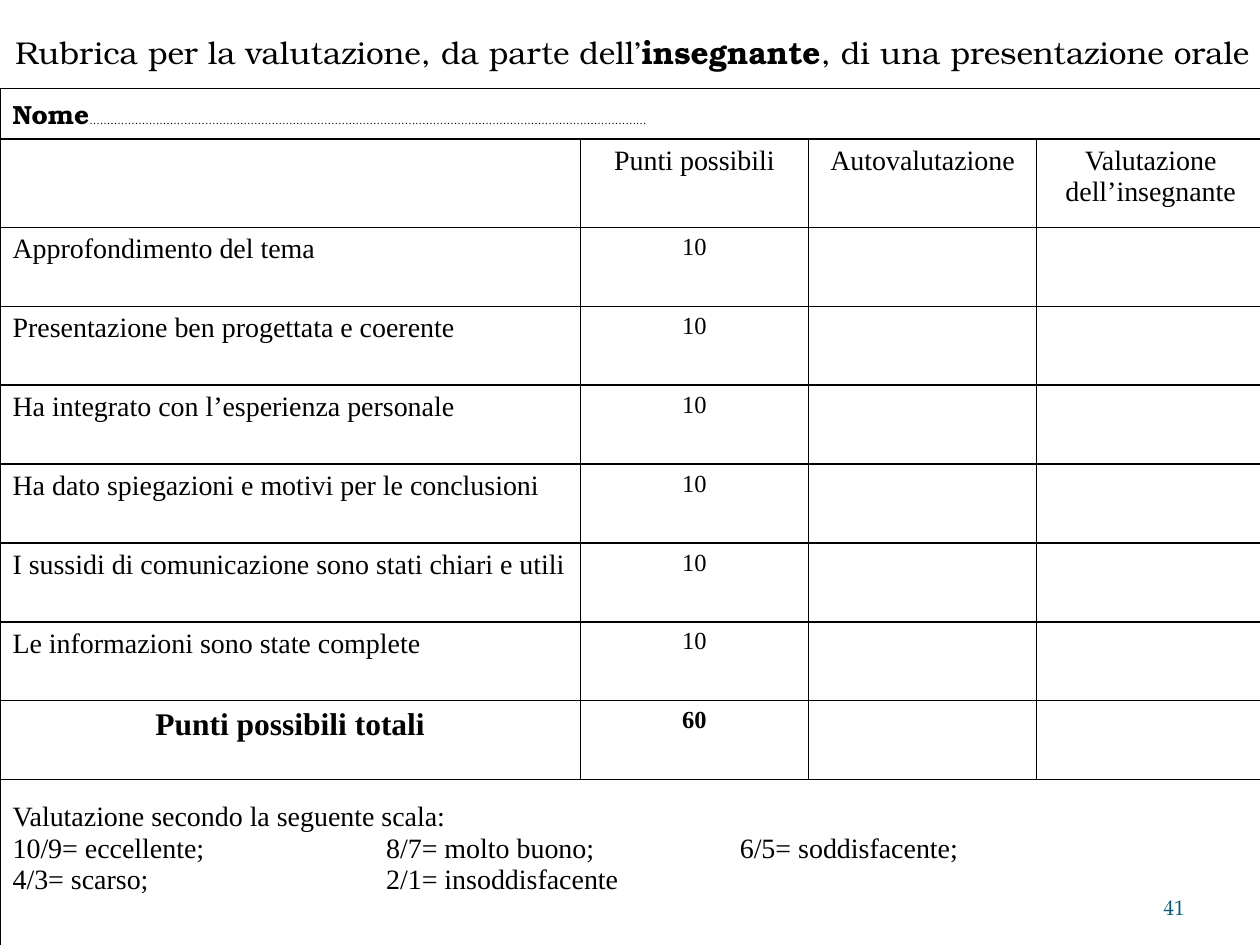
from dataclasses import dataclass
from lxml.etree import SubElement
from pptx import Presentation
from pptx.dml.color import RGBColor
from pptx.enum.text import MSO_ANCHOR, PP_ALIGN
from pptx.oxml.ns import qn
from pptx.util import Cm, Pt


@dataclass(frozen=True)
class Theme:
    ink: str = "000000"
    accent: str = "045D75"
    heading_font: str = "TeX Gyre Bonum"
    table_font: str = "Times New Roman"
    number_font: str = "TeX Gyre Pagella"
    title: int = 18
    name: int = 15
    dots: int = 6
    body: int = 16
    points: int = 14
    number: int = 12
    border: int = 1


THEME = Theme()

TITLE = [
    ("Rubrica per la valutazione, da parte dell’", False),
    ("insegnante", True),
    (", di una presentazione orale", False),
]
NAME_LABEL = "Nome"
NAME_DOTS = "……………………………………………………………………………………………………………………………………………"
HEADINGS = ["", "Punti possibili", "Autovalutazione", "Valutazione dell’insegnante"]
CRITERIA = [
    "Approfondimento del tema",
    "Presentazione ben progettata e coerente",
    "Ha integrato con l’esperienza personale",
    "Ha dato spiegazioni e motivi per le conclusioni",
    "I sussidi di comunicazione sono stati chiari e utili",
    "Le informazioni sono state complete",
]
POINTS = 10
TOTAL_LABEL = "Punti possibili totali"
SCALE = [
    ["Valutazione secondo la seguente scala:"],
    ["10/9= eccellente;", "8/7= molto buono;", "6/5= soddisfacente;"],
    ["4/3= scarso;", "2/1= insoddisfacente"],
]
SCALE_STOPS = [Cm(7.53), Cm(14.66)]
SCALE_TOP = Cm(0.45)
PAGE_NUMBER = "41"

COLUMNS = [Cm(11.7)] + [Cm(4.6)] * 3
ROWS = [Cm(0.93), Cm(1.78)] + [Cm(1.59)] * (len(CRITERIA) + 1) + [Cm(3.43)]
TABLE_TOP = Cm(1.78)


def style(font, face, size, bold=False, color=THEME.ink):
    font.name = face
    font.size = Pt(size)
    font.bold = bold
    font.color.rgb = RGBColor.from_string(color)


def write(paragraph, text, size=THEME.body, bold=False, align=PP_ALIGN.LEFT):
    paragraph.text = text
    paragraph.alignment = align
    style(paragraph.font, THEME.table_font, size, bold)


def add_tab_stops(paragraph, stops):
    stop_list = SubElement(paragraph._p.get_or_add_pPr(), qn("a:tabLst"))
    for stop in stops:
        SubElement(stop_list, qn("a:tab"), pos=str(int(stop)), algn="l")


def outline(cell):
    properties = cell._tc.get_or_add_tcPr()
    for side in ("lnL", "lnR", "lnT", "lnB"):
        line = SubElement(properties, qn(f"a:{side}"), w=str(int(Pt(THEME.border))))
        fill = SubElement(line, qn("a:solidFill"))
        SubElement(fill, qn("a:srgbClr"), val=THEME.ink)
    cell.fill.background()


def add_title(slide):
    title = slide.shapes.title
    title.left, title.top, title.width, title.height = Cm(0), Cm(0.53), Cm(25.5), Cm(1.02)
    frame = title.text_frame
    frame.word_wrap = False
    frame.vertical_anchor = MSO_ANCHOR.MIDDLE
    heading = frame.paragraphs[0]
    heading.alignment = PP_ALIGN.CENTER
    for text, bold in TITLE:
        part = heading.add_run()
        part.text = text
        style(part.font, THEME.heading_font, THEME.title, bold)


def add_rubric(slide):
    rubric = slide.shapes.add_table(
        len(ROWS), len(COLUMNS), Cm(0), TABLE_TOP, sum(COLUMNS), sum(ROWS)
    ).table
    rubric.first_row = rubric.horz_banding = False
    for column, width in zip(rubric.columns, COLUMNS):
        column.width = width
    for row, height in zip(rubric.rows, ROWS):
        row.height = height
    for cell in rubric.iter_cells():
        outline(cell)

    last = len(ROWS) - 1
    for row in (0, last):
        rubric.cell(row, 0).merge(rubric.cell(row, len(COLUMNS) - 1))

    def first_paragraph(row, column):
        return rubric.cell(row, column).text_frame.paragraphs[0]

    name_line = first_paragraph(0, 0)
    for text, size, bold in ((NAME_LABEL, THEME.name, True), (NAME_DOTS, THEME.dots, False)):
        part = name_line.add_run()
        part.text = text
        style(part.font, THEME.heading_font, size, bold)

    for column, heading in enumerate(HEADINGS):
        if heading:
            write(first_paragraph(1, column), heading, align=PP_ALIGN.CENTER)

    for row, criterion in enumerate(CRITERIA, start=2):
        write(first_paragraph(row, 0), criterion)
        write(first_paragraph(row, 1), str(POINTS), THEME.points, align=PP_ALIGN.CENTER)

    total = str(POINTS * len(CRITERIA))
    write(first_paragraph(last - 1, 0), TOTAL_LABEL, THEME.title, True, PP_ALIGN.CENTER)
    write(first_paragraph(last - 1, 1), total, THEME.points, True, PP_ALIGN.CENTER)

    scale = rubric.cell(last, 0)
    scale.margin_top = SCALE_TOP
    for index, grades in enumerate(SCALE):
        frame = scale.text_frame
        grade_line = frame.add_paragraph() if index else frame.paragraphs[0]
        add_tab_stops(grade_line, SCALE_STOPS[:len(grades) - 1])
        write(grade_line, "\t".join(grades))


def add_page_number(slide):
    frame = slide.shapes.add_textbox(Cm(22.02), Cm(17.65), Cm(2.11), Cm(1.02)).text_frame
    frame.word_wrap = True
    frame.vertical_anchor = MSO_ANCHOR.BOTTOM
    number = frame.paragraphs[0]
    number.text = PAGE_NUMBER
    number.alignment = PP_ALIGN.RIGHT
    style(number.font, THEME.number_font, THEME.number, color=THEME.accent)


def main():
    deck = Presentation()
    deck.slide_width, deck.slide_height = Cm(25.4), Cm(19.05)
    slide = deck.slides.add_slide(deck.slide_layouts[5])
    add_title(slide)
    add_rubric(slide)
    add_page_number(slide)
    deck.save("out.pptx")


if __name__ == "__main__":
    main()
